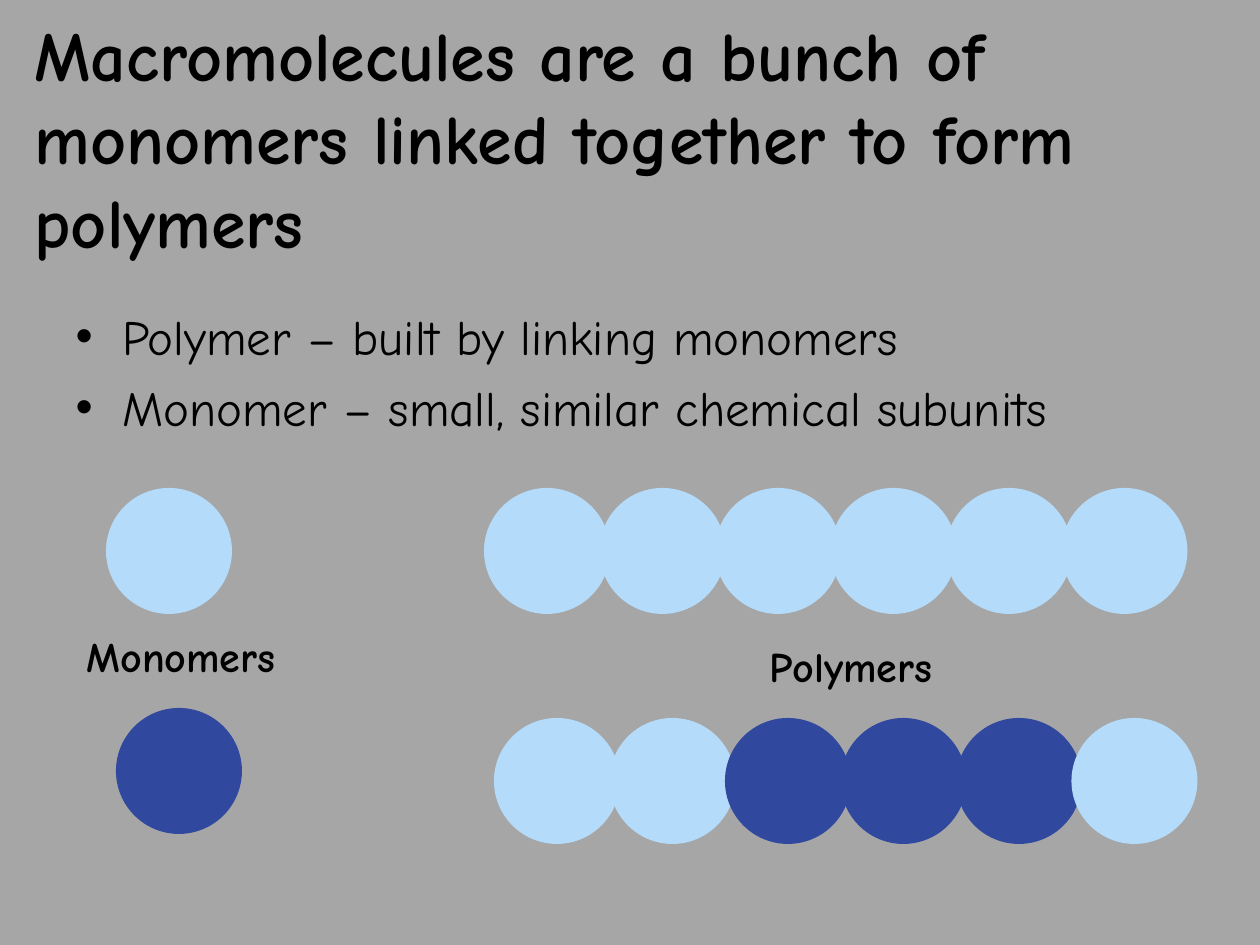
from lxml.etree import SubElement
from pptx import Presentation
from pptx.dml.color import RGBColor
from pptx.enum.shapes import MSO_SHAPE
from pptx.enum.text import MSO_ANCHOR, MSO_AUTO_SIZE, PP_ALIGN
from pptx.oxml.ns import qn
from pptx.util import Pt

PX = 914400 / 126
FONT = "Comic Neue"
GREY = RGBColor(0xA6, 0xA6, 0xA6)
BLACK = RGBColor(0, 0, 0)
LIGHT = RGBColor(0xB4, 0xDC, 0xFA)
DARK = RGBColor(0x31, 0x48, 0x9F)

HEADING = "Macromolecules are a bunch of monomers linked together to form polymers"
DEFINITIONS = [
    "Polymer – built by linking monomers",
    "Monomer – small, similar chemical subunits",
]
LABELS = [
    ("Monomers", (74, 624, 284, 63)),
    ("Polymers", (757, 634, 305, 64)),
]
CHAINS = [
    (106, 488, [LIGHT]),
    (484, 488, [LIGHT] * 6),
    (116, 708, [DARK]),
    (494, 718, [LIGHT, LIGHT, DARK, DARK, DARK, LIGHT]),
]
UNIT_SIZE = 126
UNIT_STEP = 115.5


def emu(px):
    return round(px * PX)


def place(shape, box):
    for side, px in zip(("left", "top", "width", "height"), box):
        setattr(shape, side, emu(px))


def write(shape, lines, size, bold=False, anchor=MSO_ANCHOR.TOP, before=0):
    frame = shape.text_frame
    for key, value in {
        "word_wrap": True,
        "auto_size": MSO_AUTO_SIZE.NONE,
        "vertical_anchor": anchor,
    }.items():
        setattr(frame, key, value)
    frame.text = "\n".join(lines)
    for paragraph in frame.paragraphs:
        paragraph.alignment = PP_ALIGN.LEFT
        paragraph.space_before = Pt(before)
        font = paragraph.runs[0].font
        for key, value in {"name": FONT, "size": Pt(size), "bold": bold}.items():
            setattr(font, key, value)
        font.color.rgb = BLACK


def add_bullets(shape, indent):
    for paragraph in shape.text_frame.paragraphs:
        properties = paragraph._p.get_or_add_pPr()
        properties.set("marL", str(emu(indent)))
        properties.set("indent", str(-emu(indent)))
        SubElement(properties, qn("a:buChar")).set("char", "•")


def add_chain(slide, left, top, colours):
    for position, colour in enumerate(colours):
        unit = slide.shapes.add_shape(MSO_SHAPE.OVAL, 0, 0, 0, 0)
        place(unit, (left + position * UNIT_STEP, top, UNIT_SIZE, UNIT_SIZE))
        unit.shadow.inherit = False
        unit.fill.solid()
        unit.fill.fore_color.rgb = colour
        unit.line.fill.background()


def main():
    deck = Presentation()
    deck.slide_width, deck.slide_height = emu(1260), emu(945)
    slide = deck.slides.add_slide(deck.slide_layouts[1])
    slide.background.fill.solid()
    slide.background.fill.fore_color.rgb = GREY

    heading = slide.shapes.title
    place(heading, (22, 58, 1203, 158))
    write(heading, [HEADING], 40, bold=True, anchor=MSO_ANCHOR.MIDDLE)

    definitions = slide.placeholders[1]
    place(definitions, (63, 300, 1134, 544))
    write(definitions, DEFINITIONS, 28, before=7)
    add_bullets(definitions, 47)

    for chain in CHAINS:
        add_chain(slide, *chain)
    for text, box in LABELS:
        label = slide.shapes.add_textbox(0, 0, 0, 0)
        place(label, box)
        write(label, [text], 24, bold=True)

    deck.save("out.pptx")


if __name__ == "__main__":
    main()
